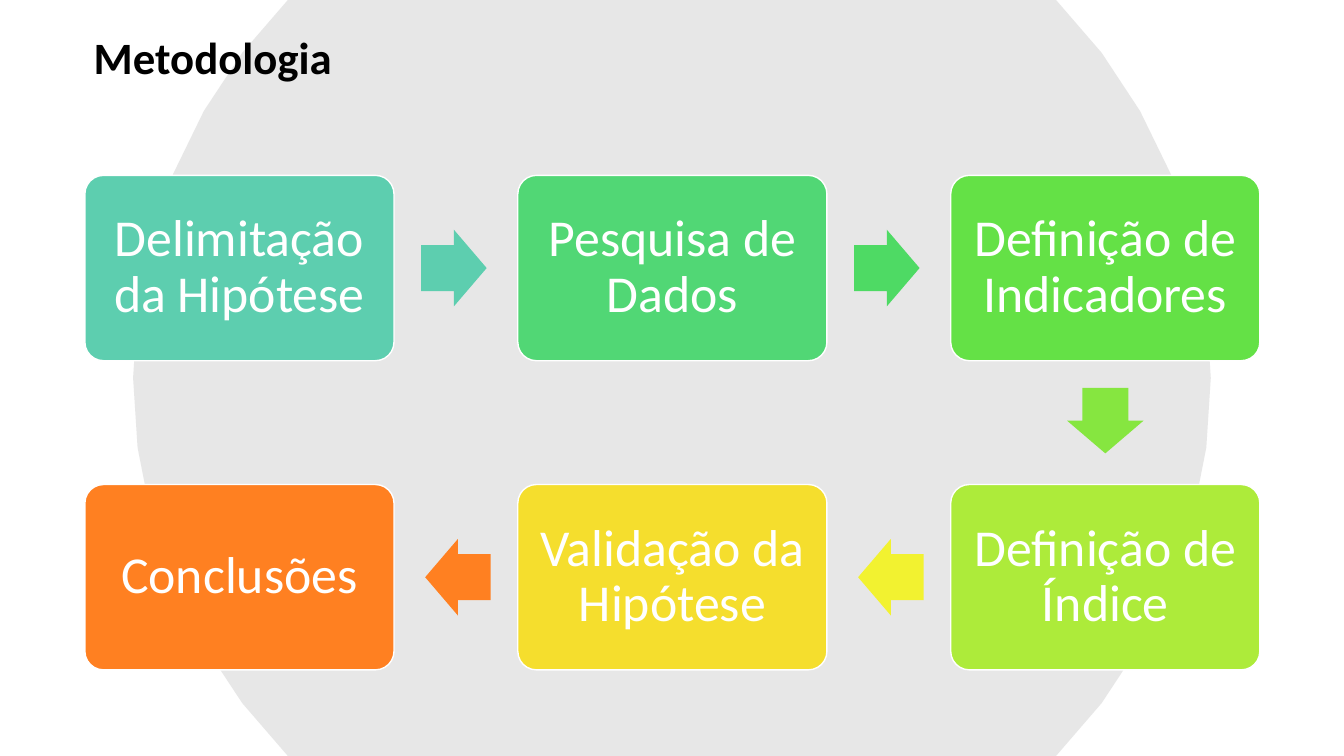
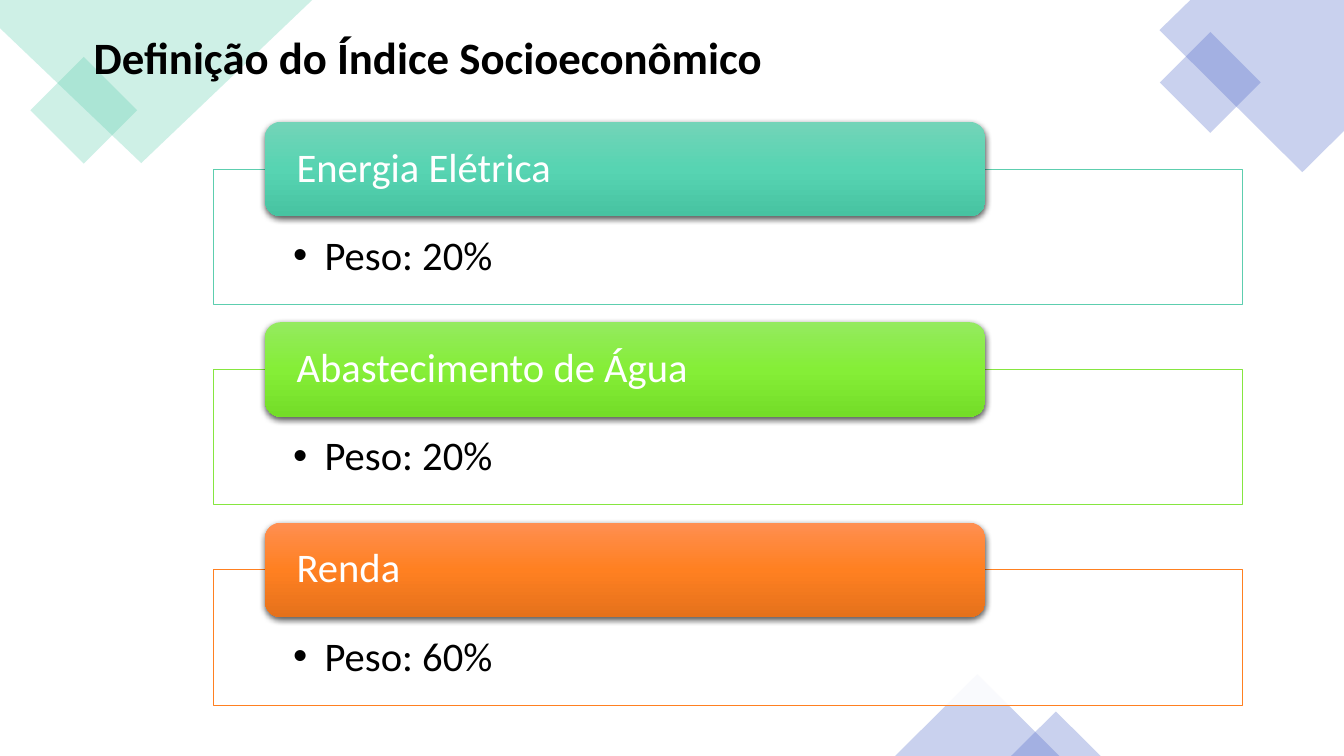
from math import asin, cos, pi, sin

from lxml.etree import SubElement
from pptx import Presentation
from pptx.dml.color import RGBColor
from pptx.enum.shapes import MSO_SHAPE
from pptx.enum.text import MSO_ANCHOR, MSO_AUTO_SIZE, PP_ALIGN
from pptx.oxml.ns import qn
from pptx.util import Cm, Pt

COLORS = {
    "white": "FFFFFF", "black": "000000", "gray": "D9D9D9",
    "teal": "5DCEAF", "blue": "4E67C8", "lime": "86E640", "orange": "FF8021",
}
WIDTH, HEIGHT = 33.87, 19.05
FONT = "Calibri"
TITLE_BOX = (2.11, 0.62, 29.67, 1.63)
TITLE_FONT = {"name": FONT, "size": Pt(32), "bold": True}
STEP_FONT = {"name": FONT, "size": Pt(37)}
WEIGHT_FONT = {"name": FONT, "size": Pt(29)}

FLOW_TITLE = "Metodologia"
STEPS = [
    ("Delimitação da Hipótese", "5DCEAF", (0, 0)),
    ("Pesquisa de Dados", "51D775", (1, 0)),
    ("Definição de Indicadores", "64E146", (2, 0)),
    ("Definição de Índice", "ADEB3A", (2, 1)),
    ("Validação da Hipótese", "F5DE2D", (1, 1)),
    ("Conclusões", "FF8021", (0, 1)),
]
ARROW_COLORS = ["5DCEAF", "4EDA64", "86E640", "F2F230", "FF8021"]
ARROW_TURNS = {(1, 0): 0, (0, 1): 90, (-1, 0): 180}

INDEX_TITLE = "Definição do Índice Socioeconômico"
WEIGHTS = [
    ("Energia Elétrica", "Peso: 20%", "teal", ("73D4B8", "57D4B2", "47C3A1")),
    ("Abastecimento de Água", "Peso: 20%", "lime", ("94EA5F", "85EE37", "74DD28")),
    ("Renda", "Peso: 60%", "orange", ("FF8F51", "FF8021", "E5711B")),
]
CORNERS = [
    ("teal", [(0, 0), (7.87, 0), (3.56, 4.11), (0, 0.71)]),
    ("blue", [(30, 0), (WIDTH, 0), (WIDTH, 3.3), (32.82, 4.34), (29.22, 0.76)]),
]
ORNAMENTS = [
    (MSO_SHAPE.RECTANGLE, "teal", (1.16, 1.83, 1.9, 1.9), 45),
    (MSO_SHAPE.RECTANGLE, "blue", (29.6, 1.18, 1.8, 1.8), 45),
    (MSO_SHAPE.ISOSCELES_TRIANGLE, "blue", (22.56, 16.99, 4.14, 2.06), 0),
    (MSO_SHAPE.ISOSCELES_TRIANGLE, "blue", (25.48, 17.93, 2.26, 1.12), 0),
]


def rgb(color):
    return RGBColor.from_string(COLORS.get(color, color))


def assign(target, values):
    for name, value in values.items():
        setattr(target, name, value)


def paint(sp, fill, alpha=100, line=None, width=1):
    sp.shadow.inherit = False
    sp.fill.solid()
    sp.fill.fore_color.rgb = rgb(fill)
    if alpha < 100:
        color = sp._element.spPr.find(qn("a:solidFill"))[0]
        SubElement(color, qn("a:alpha"), val=str(alpha * 1000))
    if line:
        sp.line.color.rgb = rgb(line)
        sp.line.width = Pt(width)
    else:
        sp.line.fill.background()


def add_preset(s, kind, box, fill, **style):
    sp = s.shapes.add_shape(kind, *map(Cm, box))
    paint(sp, fill, **style)
    return sp


def add_polygon(s, points, fill, alpha):
    corners = [(Cm(x), Cm(y)) for x, y in points]
    builder = s.shapes.build_freeform(*corners[0])
    builder.add_line_segments(corners[1:], close=True)
    paint(builder.convert_to_shape(), fill, alpha)


def write(sp, text, font, color, insets, align=PP_ALIGN.LEFT,
          anchor=MSO_ANCHOR.MIDDLE, spacing=0.9):
    tf = sp.text_frame
    sides = ("margin_left", "margin_top", "margin_right", "margin_bottom")
    assign(tf, dict(zip(sides, map(Cm, insets))))
    assign(tf, {"word_wrap": True, "auto_size": MSO_AUTO_SIZE.NONE,
                "vertical_anchor": anchor})
    p = tf.paragraphs[0]
    assign(p, {"alignment": align, "line_spacing": spacing})
    r = p.add_run()
    r.text = text
    assign(r.font, font)
    r.font.color.rgb = rgb(color)
    return p


def add_title(s, text):
    sp = s.shapes.title
    assign(sp, dict(zip(("left", "top", "width", "height"), map(Cm, TITLE_BOX))))
    write(sp, text, TITLE_FONT, "black", (0.25, 0.13, 0.25, 0.13),
          anchor=MSO_ANCHOR.TOP, spacing=1.0)
    s.shapes._spTree.append(sp._element)


def add_bullet(p):
    pPr = p._p.get_or_add_pPr()
    pPr.set("marL", str(Cm(0.79)))
    pPr.set("indent", str(-Cm(0.79)))
    SubElement(pPr, qn("a:buFont"), typeface="Arial")
    SubElement(pPr, qn("a:buChar"), char="•")


def shade(sp, stops):
    sp.fill.gradient()
    sp.fill.gradient_angle = 270
    stop_list = sp._element.spPr.find(qn("a:gradFill")).find(qn("a:gsLst"))
    for stop in list(stop_list):
        stop_list.remove(stop)
    for i, color in enumerate(stops):
        stop = SubElement(stop_list, qn("a:gs"), pos=str(i * 50000))
        SubElement(stop, qn("a:srgbClr"), val=color)


def drop_shadow(sp):
    effects = sp._element.spPr.find(qn("a:effectLst"))
    shadow = SubElement(effects, qn("a:outerShdw"), blurRad=str(Pt(4.5)),
                        dist=str(Pt(1.5)), dir="5400000", rotWithShape="0")
    color = SubElement(shadow, qn("a:srgbClr"), val=COLORS["black"])
    SubElement(color, qn("a:alpha"), val="63000")


def add_disc(s):
    radius, cx, cy, count = 13.58, WIDTH / 2, HEIGHT / 2, 12
    half = asin(cy / radius)
    angles = [middle - half + 2 * half * i / count
              for middle in (0, pi) for i in range(count + 1)]
    points = [(cx + radius * cos(a), cy + radius * sin(a)) for a in angles]
    add_polygon(s, points, "gray", 62)


def add_flow(s):
    left, top, width, height = 2.14, 4.42, 7.79, 4.67
    pitch_x, pitch_y = 10.91, 7.79
    arrow_w, arrow_h, setback = 1.65, 1.93, 0.05
    for i, (text, color, (col, row)) in enumerate(STEPS):
        x, y = left + col * pitch_x, top + row * pitch_y
        sp = add_preset(s, MSO_SHAPE.ROUNDED_RECTANGLE, (x, y, width, height),
                        color, line="white")
        sp.adjustments[0] = 0.1
        write(sp, text, STEP_FONT, "white", (0.38,) * 4, PP_ALIGN.CENTER)
        if i == len(STEPS) - 1:
            break
        next_col, next_row = STEPS[i + 1][2]
        dx, dy = next_col - col, next_row - row
        cx = x + width / 2 + dx * (pitch_x / 2 - setback)
        cy = y + height / 2 + dy * (pitch_y / 2 - setback)
        arrow = add_preset(s, MSO_SHAPE.RIGHT_ARROW,
                           (cx - arrow_w / 2, cy - arrow_h / 2, arrow_w, arrow_h),
                           ARROW_COLORS[i])
        arrow.adjustments[0] = 0.6
        arrow.rotation = ARROW_TURNS[dx, dy]


def add_ornaments(s):
    for color, points in CORNERS:
        add_polygon(s, points, color, 30)
    for kind, color, box, turn in ORNAMENTS:
        add_preset(s, kind, box, color, alpha=30).rotation = turn


def add_weights(s):
    left, top, pitch = 5.38, 4.26, 5.05
    for i, (name, weight, color, stops) in enumerate(WEIGHTS):
        y = top + i * pitch
        panel = add_preset(s, MSO_SHAPE.RECTANGLE, (left, y, 25.93, 3.41),
                           "white", alpha=90, line=color, width=0.5)
        add_bullet(write(panel, weight, WEIGHT_FONT, "black",
                         (2.01, 1.67, 2.01, 0.58), anchor=MSO_ANCHOR.TOP))
        header = add_preset(s, MSO_SHAPE.ROUNDED_RECTANGLE,
                            (left + 1.3, y - 1.19, 18.15, 2.38), color)
        shade(header, stops)
        drop_shadow(header)
        write(header, name, WEIGHT_FONT, "white", (0.68, 0, 0.68, 0))


def main():
    prs = Presentation()
    prs.slide_width, prs.slide_height = Cm(WIDTH), Cm(HEIGHT)
    for title, backdrop, content in (
        (FLOW_TITLE, add_disc, add_flow),
        (INDEX_TITLE, add_ornaments, add_weights),
    ):
        s = prs.slides.add_slide(prs.slide_layouts[5])
        backdrop(s)
        add_title(s, title)
        content(s)
    prs.save("out.pptx")


if __name__ == "__main__":
    main()
